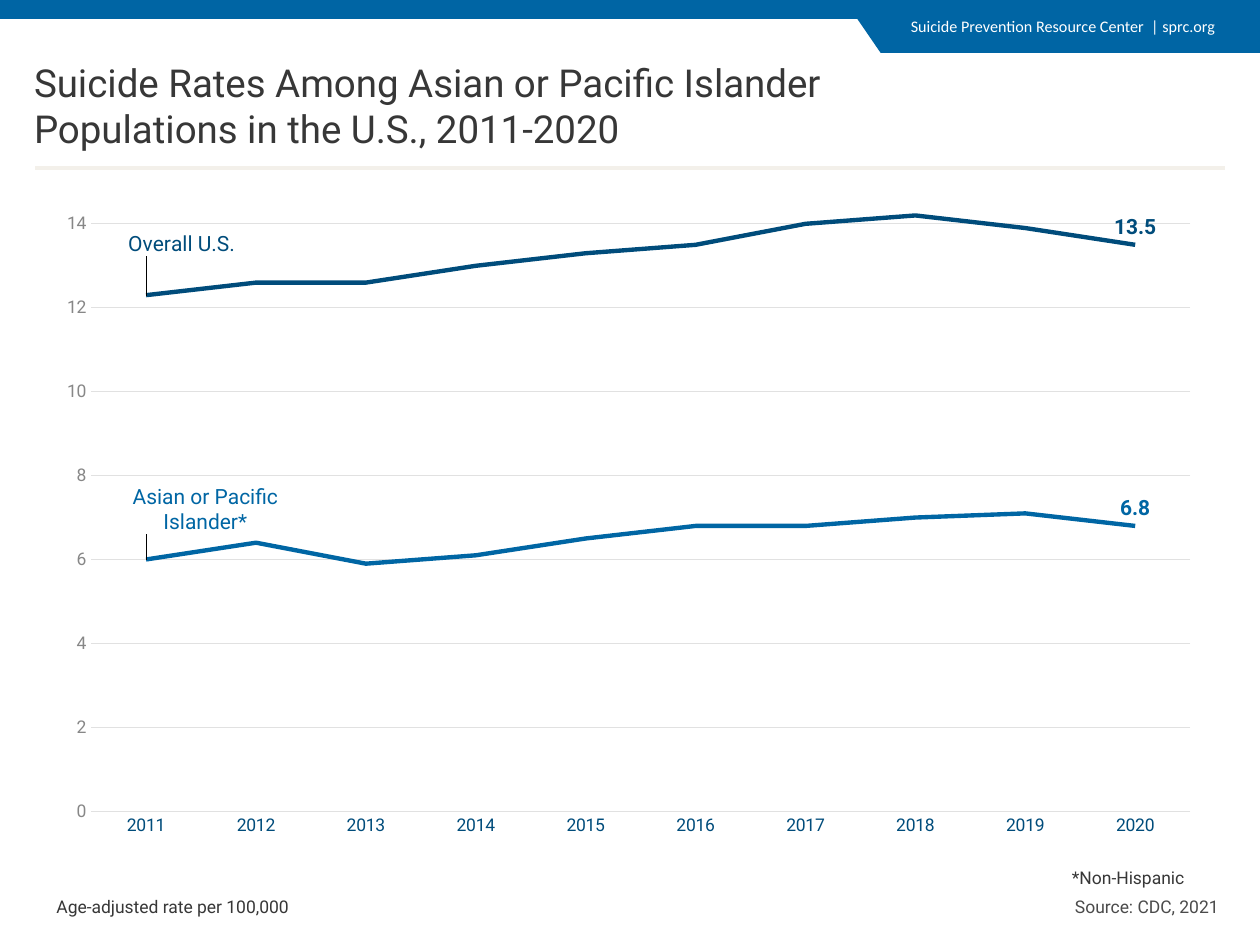
from lxml.etree import SubElement, fromstring
from pptx import Presentation
from pptx.chart.data import CategoryChartData
from pptx.dml.color import RGBColor
from pptx.enum.chart import XL_CHART_TYPE, XL_LABEL_POSITION, XL_MARKER_STYLE, XL_TICK_MARK
from pptx.enum.shapes import MSO_CONNECTOR, MSO_SHAPE
from pptx.enum.text import MSO_ANCHOR, PP_ALIGN
from pptx.oxml.ns import qn
from pptx.util import Inches, Pt

BLUE = RGBColor(0x00, 0x65, 0xA4)
ISLANDER_BLUE = RGBColor(0x00, 0x66, 0xA4)
NAVY = RGBColor(0x00, 0x4C, 0x7B)
DARK = RGBColor(0x37, 0x37, 0x37)
SOURCE_GRAY = RGBColor(0x4B, 0x4B, 0x4B)
AXIS_GRAY = RGBColor(0x87, 0x87, 0x87)
GRID_GRAY = RGBColor(0xE1, 0xE1, 0xE1)
RULE = RGBColor(0xF3, 0xF0, 0xEA)
WHITE = RGBColor(0xFF, 0xFF, 0xFF)

TITLE = "Suicide Rates Among Asian or Pacific Islander Populations in the U.S., 2011-2020"
HEADER = "Suicide Prevention Resource Center  | sprc.org"
TEXTS = [
    (HEADER, (7.13, 0.08, 2.95, 0.41), PP_ALIGN.LEFT,
     {"name": "Calibri", "size": Pt(9.2)}, WHITE),
    ("Source: CDC, 2021", (8.41, 7.06, 1.36, 0.27), PP_ALIGN.RIGHT,
     {"name": "Roboto", "size": Pt(10)}, SOURCE_GRAY),
    ("*Non-Hispanic", (8.41, 6.83, 1.17, 0.27), PP_ALIGN.LEFT,
     {"name": "Roboto", "size": Pt(10)}, DARK),
    ("Age-adjusted rate per 100,000", (0.35, 7.06, 2.17, 0.27), PP_ALIGN.LEFT,
     {"name": "Roboto", "size": Pt(10)}, DARK),
]
YEARS = [str(year) for year in range(2011, 2021)]
SERIES = [
    ("Asian or Pacific Islander*", [6, 6.4, 5.9, 6.1, 6.5, 6.8, 6.8, 7, 7.1, 6.8],
     ISLANDER_BLUE, (0.05, -0.03)),
    ("Overall U.S.", [12.3, 12.6, 12.6, 13, 13.3, 13.5, 14, 14.2, 13.9, 13.5],
     NAVY, (0.03, -0.05)),
]
PLOT = {"x": 0.046, "y": 0.03, "w": 0.926, "h": 0.901}
LEADER_LINES = (
    '<c:extLst xmlns:c="http://schemas.openxmlformats.org/drawingml/2006/chart">'
    '<c:ext uri="{CE6537A1-D6FC-4f65-9D91-7224C49458BB}" '
    'xmlns:c15="http://schemas.microsoft.com/office/drawing/2012/chart">'
    '<c15:showLeaderLines val="1"/></c:ext></c:extLst>'
)


def style(font, formats, color):
    for key, value in formats.items():
        setattr(font, key, value)
    font.color.rgb = color


def fill(shape, color):
    shape.fill.solid()
    shape.fill.fore_color.rgb = color
    shape.line.fill.background()
    shape.shadow.inherit = False


def write(tf, text, align, anchor, formats, color):
    tf.word_wrap = True
    tf.vertical_anchor = anchor
    p = tf.paragraphs[0]
    p.alignment = align
    r = p.add_run()
    r.text = text
    style(r.font, formats, color)


def place(shape, box):
    for key, value in zip(("left", "top", "width", "height"), box):
        setattr(shape, key, Inches(value))


def manual_layout(layout, settings):
    manual = SubElement(layout, qn("c:manualLayout"))
    for key, value in settings.items():
        SubElement(manual, qn("c:" + key)).set("val", str(value))


def label_series(series, color, offset):
    series.data_labels.show_value = False
    for index, bold in ((0, False), (len(YEARS) - 1, True)):
        label = series.points[index].data_label
        style(label.font, {"name": "Roboto", "size": Pt(12), "bold": bold}, color)
        label.position = XL_LABEL_POSITION.ABOVE
    labels = series.data_labels._element
    first = labels.find(qn("c:dLbl"))
    first.find(qn("c:showVal")).set("val", "0")
    first.find(qn("c:showSerName")).set("val", "1")
    layout = SubElement(first, qn("c:layout"))
    first.find(qn("c:idx")).addnext(layout)
    manual_layout(layout, dict(zip("xy", offset)))
    labels.append(fromstring(LEADER_LINES))


def add_rates_chart(s):
    data = CategoryChartData()
    data.categories = YEARS
    for name, values, _, _ in SERIES:
        data.add_series(name, values)
    box = [Inches(v) for v in (0.29, 1.45, 9.42, 5.36)]
    chart = s.shapes.add_chart(XL_CHART_TYPE.LINE, *box, data).chart
    chart.has_legend = False
    chart.has_title = False
    style(chart.font, {"name": "Cabin", "size": Pt(10)}, DARK)
    chart.plots[0].vary_by_categories = False

    for axis, color in ((chart.category_axis, NAVY), (chart.value_axis, AXIS_GRAY)):
        axis.major_tick_mark = axis.minor_tick_mark = XL_TICK_MARK.NONE
        axis.format.line.fill.background()
        style(axis.tick_labels.font, {"name": "Roboto", "size": Pt(10)}, color)
    scale = {"minimum_scale": 0, "maximum_scale": 14.5, "major_unit": 2,
             "has_major_gridlines": True}
    for key, value in scale.items():
        setattr(chart.value_axis, key, value)
    grid = chart.value_axis.major_gridlines.format.line
    grid.color.rgb = GRID_GRAY
    grid.width = Pt(0.75)

    for series, (_, _, color, offset) in zip(chart.plots[0].series, SERIES):
        series.smooth = False
        series.marker.style = XL_MARKER_STYLE.NONE
        series.format.line.color.rgb = color
        series.format.line.width = Pt(2.5)
        label_series(series, color, offset)

    area = chart._chartSpace.find(".//" + qn("c:plotArea"))
    layout = area.find(qn("c:layout"))
    if layout is None:
        layout = SubElement(area, qn("c:layout"))
        area.insert(0, layout)
    manual_layout(layout, {"layoutTarget": "inner", "xMode": "edge", "yMode": "edge", **PLOT})


prs = Presentation()
prs.slide_width, prs.slide_height = Inches(10), Inches(7.5)
s = prs.slides.add_slide(prs.slide_layouts[5])

bar = s.shapes.add_shape(MSO_SHAPE.RECTANGLE, 0, 0, Inches(10), Inches(0.15))
fill(bar, BLUE)
corners = [(Inches(x), Inches(y)) for x, y in ((10, 0.1), (10, 0.42), (6.99, 0.42), (6.77, 0.1))]
builder = s.shapes.build_freeform(*corners[0])
builder.add_line_segments(corners[1:], close=True)
fill(builder.convert_to_shape(), BLUE)

place(s.shapes.title, (0.17, 0.42, 8, 1.03))
write(s.shapes.title.text_frame, TITLE, PP_ALIGN.LEFT, MSO_ANCHOR.TOP,
      {"name": "Roboto", "size": Pt(22)}, DARK)
for text, box, align, formats, color in TEXTS:
    tb = s.shapes.add_textbox(*[Inches(v) for v in box])
    write(tb.text_frame, text, align, MSO_ANCHOR.TOP, formats, color)

add_rates_chart(s)

rule = s.shapes.add_connector(MSO_CONNECTOR.STRAIGHT, Inches(0.28), Inches(1.33),
                              Inches(9.72), Inches(1.33))
rule.line.color.rgb = RULE
rule.line.width = Pt(2.25)
SubElement(rule._element.spPr, qn("a:effectLst"))

prs.save("out.pptx")
